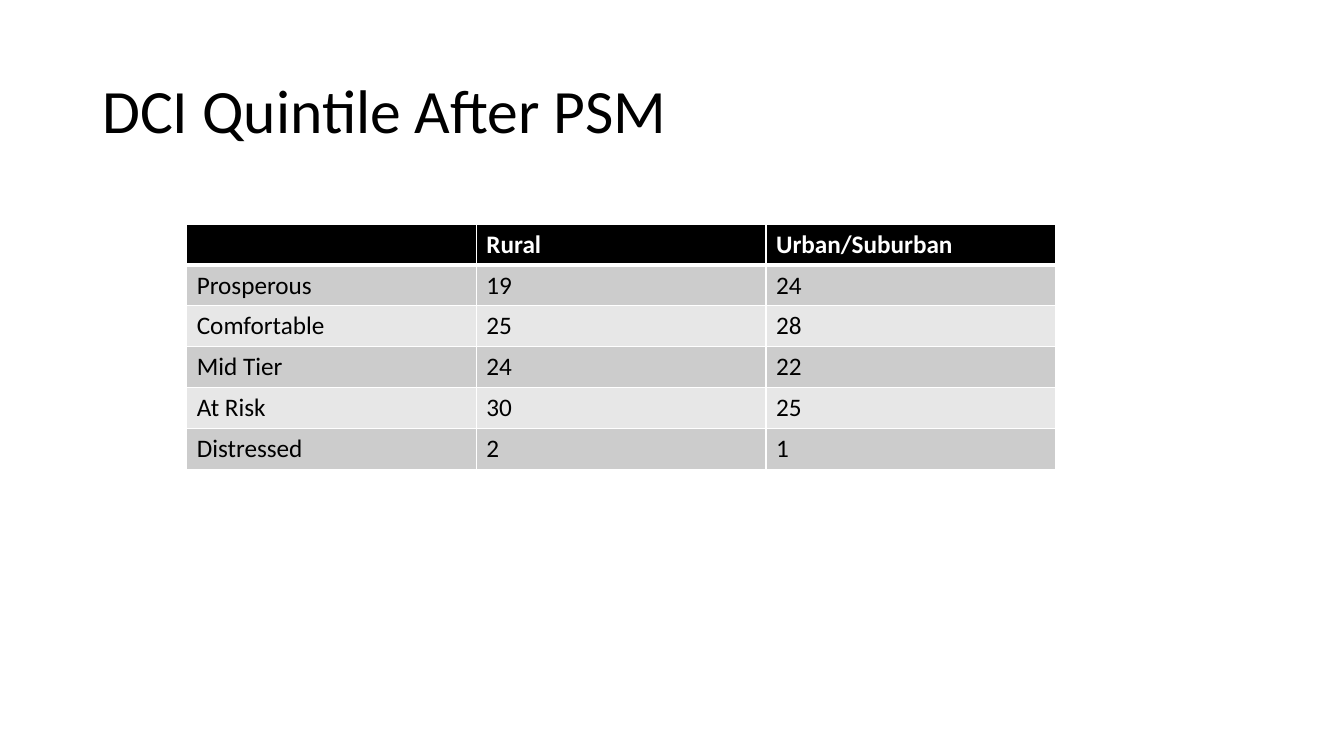
from pptx import Presentation
from pptx import oxml
from pptx import util as u
from pptx.dml import color as c
from pptx.enum import text
from pptx.oxml import ns


def color(value):
    return c.RGBColor.from_string(value)


class SlideBuilder:
    """Holds the style and the current slide, and adds its elements."""

    font_name = "Calibri"
    black, white = "000000", "FFFFFF"
    bands = ("CCCCCC", "E7E7E7")

    def __init__(self, presentation):
        self.slide = presentation.slides.add_slide(presentation.slide_layouts[6])

    def set_text(self, paragraph, content, size, fill, bold=False):
        paragraph.text = content
        values = {"name": self.font_name, "size": u.Pt(size), "bold": bold}
        for name, value in values.items():
            setattr(paragraph.font, name, value)
        paragraph.font.color.rgb = color(fill)

    def title(self, content, left, top, width, height):
        shape = self.slide.shapes.add_textbox(
            u.Pt(left), u.Pt(top), u.Pt(width), u.Pt(height))
        frame = shape.text_frame
        values = {"word_wrap": True, "vertical_anchor": text.MSO_ANCHOR.MIDDLE}
        for name, value in values.items():
            setattr(frame, name, value)
        paragraph = frame.paragraphs[0]
        paragraph.line_spacing = 0.9
        self.set_text(paragraph, content, 44, self.black)

    def borders(self, cell, widths):
        properties = cell._tc.get_or_add_tcPr()
        for side, width in widths.items():
            properties.append(oxml.parse_xml(
                f'<a:ln{side} {ns.nsdecls("a")} w="{u.Pt(width)}"><a:solidFill>'
                f'<a:srgbClr val="{self.white}"/></a:solidFill></a:ln{side}>'))

    def table(self, rows, left, top, column_width, row_height):
        columns = len(rows[0])
        shape = self.slide.shapes.add_table(
            len(rows), columns, u.Pt(left), u.Pt(top),
            u.Pt(column_width * columns), u.Pt(row_height * len(rows)))
        for i, values in enumerate(rows):
            header = i == 0
            fill = self.black if header else self.bands[(i - 1) % 2]
            for j, value in enumerate(values):
                cell = shape.table.cell(i, j)
                self.borders(cell, {"L": 1, "R": 1, "T": 3 if i == 1 else 1,
                                    "B": 3 if header else 1})
                cell.fill.solid()
                cell.fill.fore_color.rgb = color(fill)
                self.set_text(cell.text_frame.paragraphs[0], value, 18,
                              self.white if header else self.black, header)


def main():
    presentation = Presentation()
    presentation.slide_width, presentation.slide_height = u.Pt(960), u.Pt(540)
    builder = SlideBuilder(presentation)
    builder.title("DCI Quintile After PSM", 66, 28.75, 828, 104.4)
    builder.table([
        ("", "Rural", "Urban/Suburban"),
        ("Prosperous", "19", "24"),
        ("Comfortable", "25", "28"),
        ("Mid Tier", "24", "22"),
        ("At Risk", "30", "25"),
        ("Distressed", "2", "1"),
    ], 133.4, 160.1, 206.9, 29.2)
    presentation.save("out.pptx")


if __name__ == "__main__":
    main()
